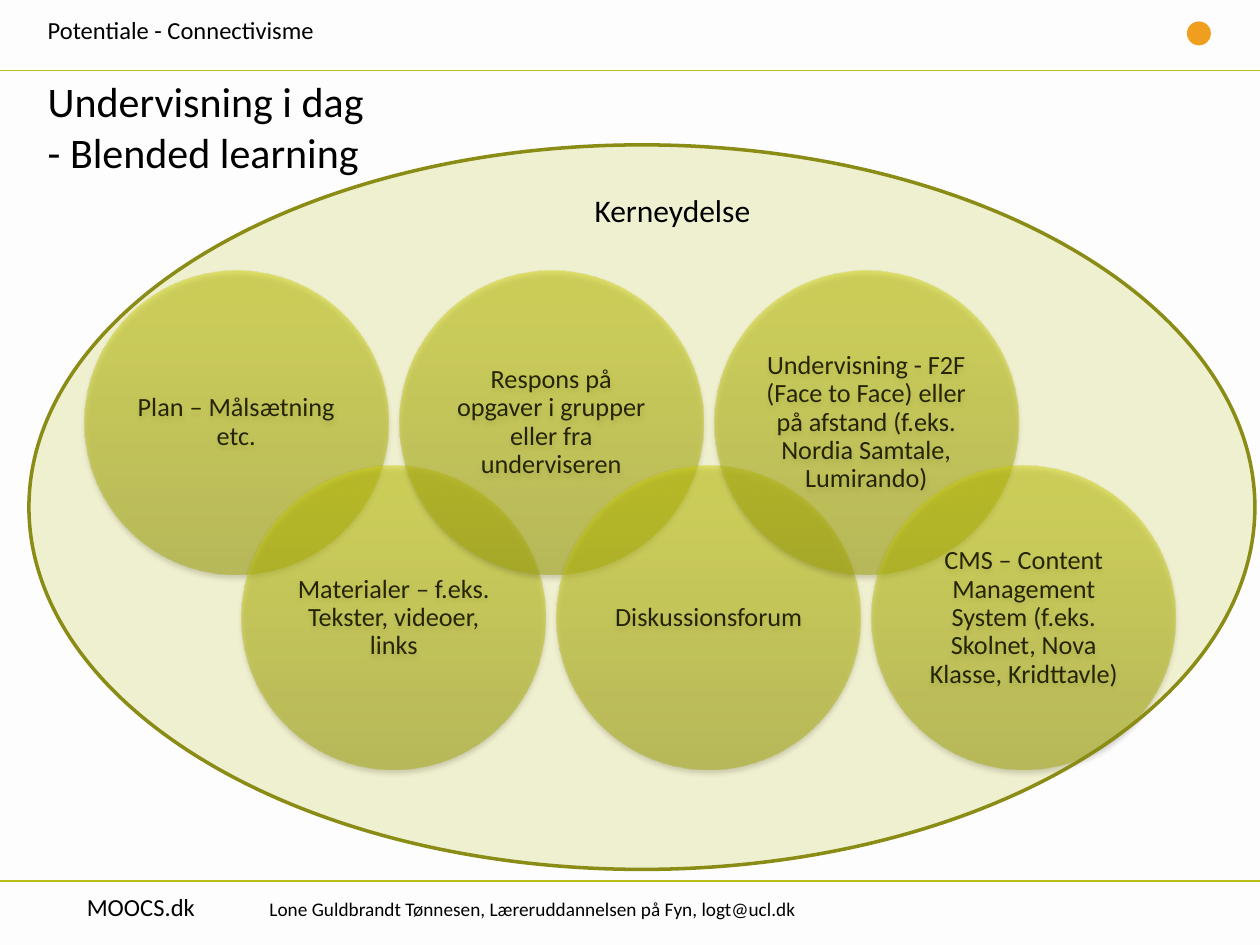
from lxml.etree import SubElement
from pptx import Presentation
from pptx.dml.color import RGBColor
from pptx.enum.shapes import MSO_CONNECTOR, MSO_SHAPE
from pptx.enum.text import MSO_ANCHOR, PP_ALIGN
from pptx.oxml import parse_xml
from pptx.oxml.ns import nsdecls, qn
from pptx.util import Inches, Pt

# The slide is a grid of 100 columns by 75 rows of square cells
COLUMNS, ROWS = 100, 75
CELL = Inches(0.1)
FONT = "Calibri"
BLACK, LIME, OLIVE, ORANGE = "000000", "BBBD17", "8A8C15", "F09E1E"
GRADIENT = [(0, "9D9F03"), (80, "CCCF04"), (100, "D1D300")]
CIRCLE_TEXTS = [
    "Plan – Målsætning etc.",
    "Materialer – f.eks. Tekster, videoer, links",
    "Respons på opgaver i grupper eller fra underviseren",
    "Diskussionsforum",
    "Undervisning - F2F (Face to Face) eller på afstand "
    "(f.eks. Nordia Samtale, Lumirando)",
    "CMS – Content Management System (f.eks. Skolnet, Nova Klasse, Kridttavle)",
]


def color(value):
    return RGBColor.from_string(value)


def grid(*cells):
    return [round(cell * CELL) for cell in cells]


def set_format(target, values):
    for name, value in values.items():
        setattr(target, name, value)


def set_frame(shape, **values):
    set_format(shape.text_frame, {"word_wrap": True, **values})
    return shape.text_frame.paragraphs[0]


def format_run(run, size):
    set_format(run.font, {"name": FONT, "size": Pt(size)})
    run.font.color.rgb = color(BLACK)


def add_text(shapes, box, text, size, **frame_values):
    paragraph = set_frame(shapes.add_textbox(*grid(*box)), **frame_values)
    paragraph.text = text
    for run in paragraph.runs:
        format_run(run, size)


def add_ellipse(shapes, box, fill):
    shape = shapes.add_shape(MSO_SHAPE.OVAL, *grid(*box))
    shape.shadow.inherit = False
    shape.fill.solid()
    shape.fill.fore_color.rgb = color(fill)
    shape.line.fill.background()
    return shape


def add_rule(shapes, row):
    line = shapes.add_connector(MSO_CONNECTOR.STRAIGHT, *grid(0, row, COLUMNS, row))
    line.line.color.rgb = color(LIME)
    line.line.width = Pt(1)
    SubElement(line._element.spPr, qn("a:effectLst"))


def add_glass_style(shape):
    """Half transparent vertical gradient with a soft shadow below."""
    stops = "".join(
        f'<a:gs pos="{position * 1000}"><a:srgbClr val="{value}">'
        '<a:alpha val="50000"/></a:srgbClr></a:gs>'
        for position, value in GRADIENT
    )
    properties = shape._element.spPr
    properties.replace(properties.find(qn("a:solidFill")), parse_xml(
        f'<a:gradFill {nsdecls("a")} rotWithShape="1"><a:gsLst>{stops}</a:gsLst>'
        '<a:lin ang="16200000" scaled="0"/></a:gradFill>'))
    properties.replace(properties.find(qn("a:effectLst")), parse_xml(
        f'<a:effectLst {nsdecls("a")}><a:outerShdw blurRad="{Pt(3.1)}" '
        f'dist="{Pt(1.8)}" dir="5400000" rotWithShape="0"><a:srgbClr val="{BLACK}">'
        '<a:alpha val="35000"/></a:srgbClr></a:outerShdw></a:effectLst>'))


def add_header(shapes, box):
    left, top, width, height = box
    dot = 1.9
    add_ellipse(shapes, (left + width - 5.8, top + 1.7, dot, dot), ORANGE)
    add_rule(shapes, top + height)
    add_text(shapes, (left + 2.8, top + 0.7, 25.2, 3.4),
             "Potentiale - Connectivisme", 14)


def add_footer(shapes, box):
    left, top, width, height = box
    add_rule(shapes, top)
    textbox = shapes.add_textbox(*grid(left + 5.9, top + 0.4, 66.2, 3.4))
    paragraph = set_frame(textbox)
    tabs = SubElement(paragraph._p.get_or_add_pPr(), qn("a:tabLst"))
    SubElement(tabs, qn("a:tab"), pos=str(Inches(1.45)), algn="l")
    parts = [("MOOCS.dk", 14), ("\t", 11),
             ("Lone Guldbrandt Tønnesen, Læreruddannelsen på Fyn, logt@ucl.dk", 11)]
    for text, size in parts:
        run = paragraph.add_run()
        run.text = text
        format_run(run, size)


def add_circles(shapes, box):
    """Circles alternate between an upper and a lower row."""
    left, top, width, height = box
    diameter = 24.1
    step = (width - diameter) / (len(CIRCLE_TEXTS) - 1)
    drop = height - diameter
    inset = Inches(0.06)
    margins = {f"margin_{side}": inset for side in ("left", "right", "top", "bottom")}
    group = shapes.add_group_shape()
    for index, text in enumerate(CIRCLE_TEXTS):
        place = (left + index * step, top + index % 2 * drop, diameter, diameter)
        circle = add_ellipse(group.shapes, place, LIME)
        add_glass_style(circle)
        paragraph = set_frame(circle, vertical_anchor=MSO_ANCHOR.MIDDLE, **margins)
        set_format(paragraph, {"alignment": PP_ALIGN.CENTER, "line_spacing": 0.9})
        run = paragraph.add_run()
        run.text = text
        format_run(run, 15)


def add_core(shapes, box):
    left, top, width, height = box
    ellipse = add_ellipse(shapes, box, "BBBD1C")
    fill_color = ellipse._element.spPr.find(qn("a:solidFill"))[0]
    SubElement(fill_color, qn("a:alpha"), val="20000")
    ellipse.line.color.rgb = color(OLIVE)
    ellipse.line.width = Pt(2)
    add_text(shapes, (left + 43.9, top + 3.2, 14.8, 4), "Kerneydelse", 18)


def main():
    presentation = Presentation()
    presentation.slide_width, presentation.slide_height = grid(COLUMNS, ROWS)
    slide = presentation.slides.add_slide(presentation.slide_layouts[6])
    background = slide.background.fill
    background.solid()
    background.fore_color.rgb = color("FDFDFD")
    shapes = slide.shapes

    # Frame of the slide
    add_header(shapes, (0, 0, COLUMNS, 5.6))
    add_footer(shapes, (0, 69.9, COLUMNS, 5.1))
    # Title
    add_text(shapes, (2.8, 6, 29.1, 7.1), "Undervisning i dag\n- Blended learning", 24,
             margin_top=0)
    # Circles, with the core ellipse laid over them
    add_circles(shapes, (6.7, 21.5, 86.6, 39.6))
    add_core(shapes, (2.3, 11.5, 97.3, 57.5))

    presentation.save("out.pptx")


if __name__ == "__main__":
    main()
